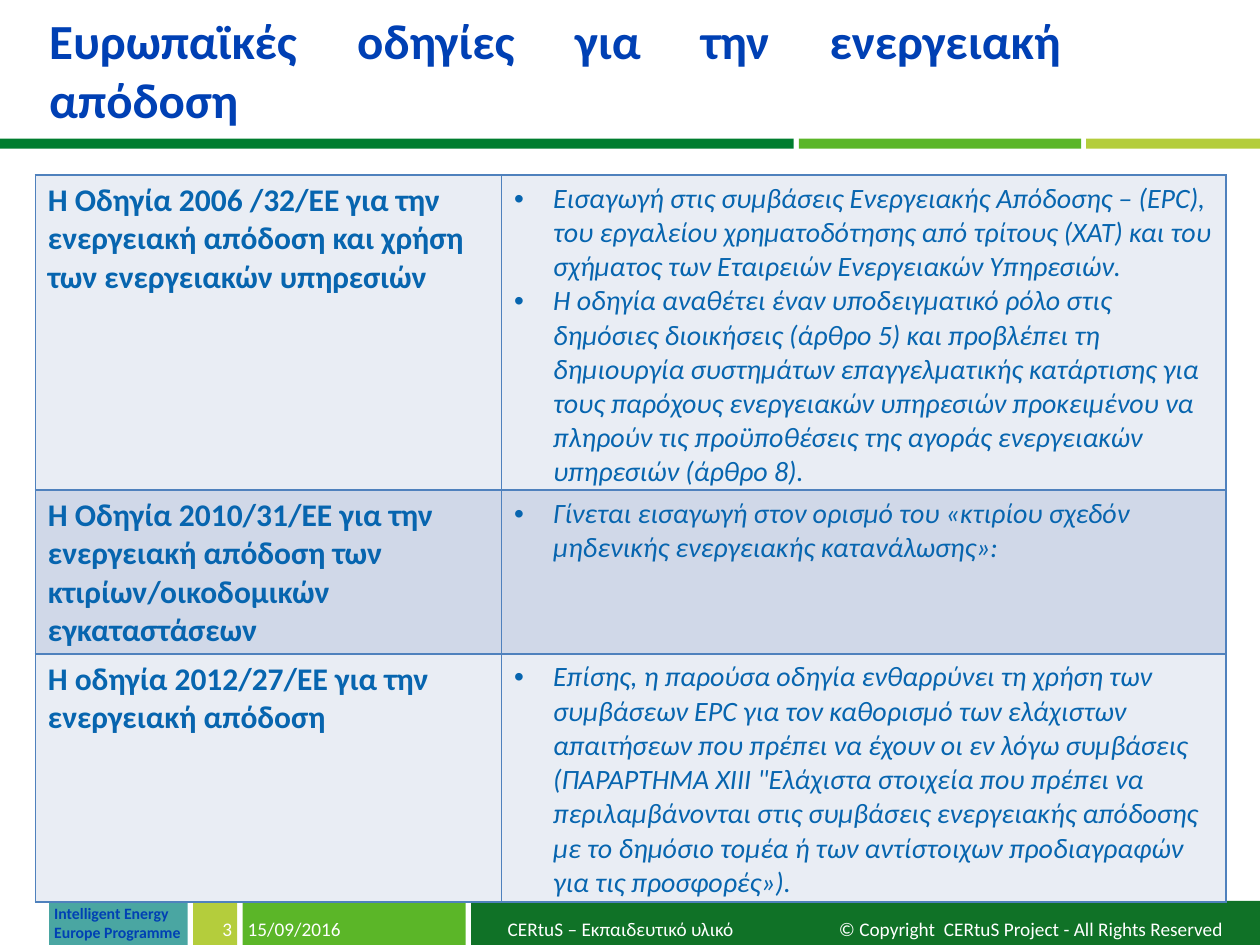
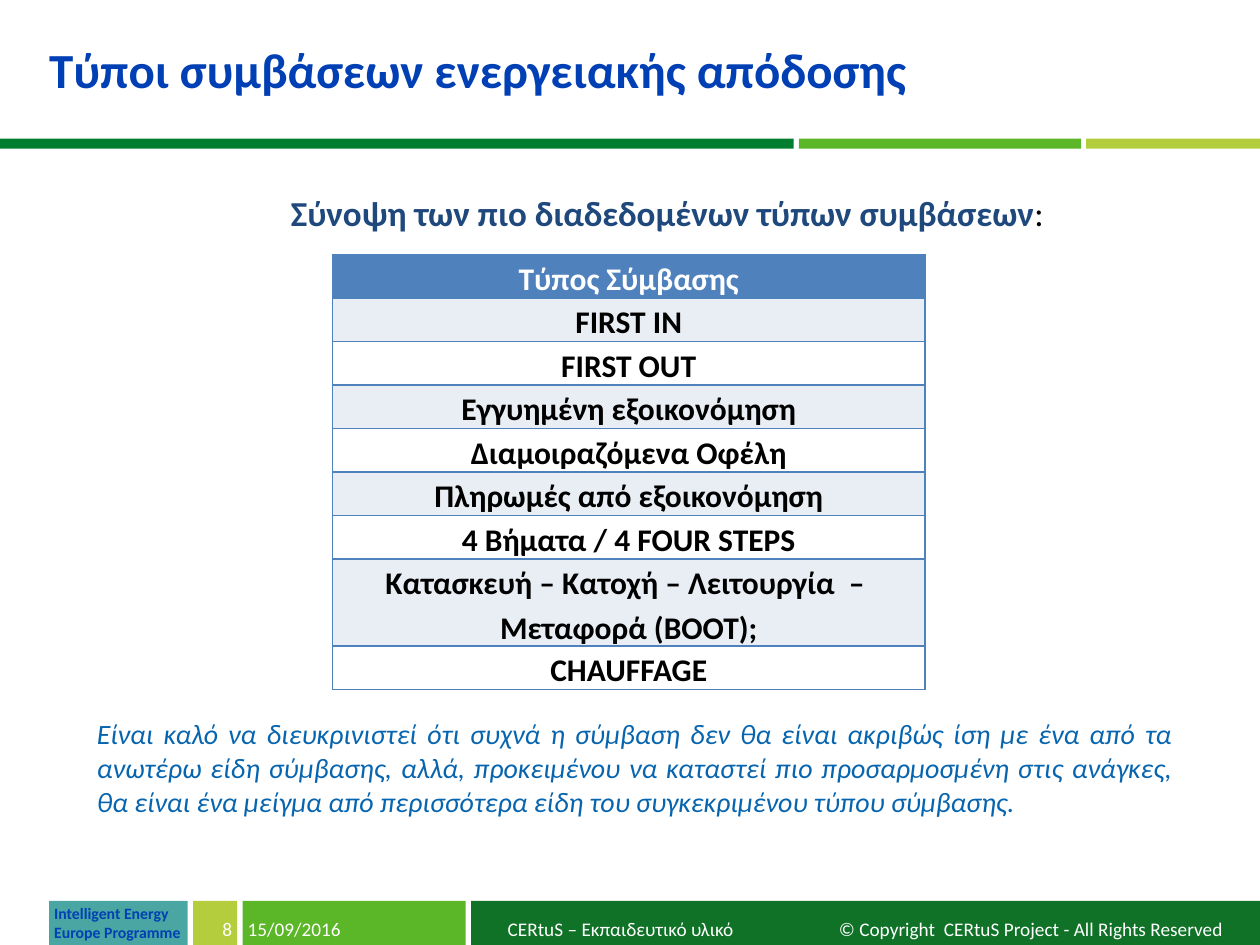
from dataclasses import dataclass

from lxml import etree
from pptx import Presentation
from pptx import util as u
from pptx.dml.color import RGBColor
from pptx.enum import shapes, text
from pptx.oxml import ns

COLS, ROWS = 100, 75  # grid units across and down the slide
UNIT = u.Inches(0.1)

FONT = "Calibri"
WHITE, BLACK = "FFFFFF", "000000"
TITLE_BLUE, TEXT_BLUE, CAPTION_BLUE = "0040B4", "0765AF", "1F497D"
DARK, MID, LIME = "007D2F", "5BB628", "B4CD3C"
TEAL, FOOTER_GREEN = "4AA6A2", "107227"
HEADER, PALE, DEEP = "4F81BD", "E9EDF4", "D0D8E8"

LEFT, CENTER, RIGHT, JUSTIFY = (
    text.PP_ALIGN.LEFT, text.PP_ALIGN.CENTER, text.PP_ALIGN.RIGHT, text.PP_ALIGN.JUSTIFY)
TOP, MIDDLE, BOTTOM = text.MSO_ANCHOR.TOP, text.MSO_ANCHOR.MIDDLE, text.MSO_ANCHOR.BOTTOM

DIRECTIVES = [
    ("Η Οδηγία 2006 /32/ΕΕ για την ενεργειακή απόδοση και χρήση των ενεργειακών υπηρεσιών",
     ["Εισαγωγή στις συμβάσεις Ενεργειακής Απόδοσης – (EPC), του εργαλείου χρηματοδότησης "
      "από τρίτους (ΧΑΤ) και του σχήματος των Εταιρειών Ενεργειακών Υπηρεσιών.",
      "Η οδηγία αναθέτει έναν υποδειγματικό ρόλο στις δημόσιες διοικήσεις (άρθρο 5) και "
      "προβλέπει τη δημιουργία συστημάτων επαγγελματικής κατάρτισης για τους παρόχους "
      "ενεργειακών υπηρεσιών προκειμένου να πληρούν τις προϋποθέσεις της αγοράς "
      "ενεργειακών υπηρεσιών (άρθρο 8)."]),
    ("Η Οδηγία 2010/31/ΕΕ για την ενεργειακή απόδοση των κτιρίων/οικοδομικών εγκαταστάσεων",
     ["Γίνεται εισαγωγή στον ορισμό του «κτιρίου σχεδόν μηδενικής ενεργειακής "
      "κατανάλωσης»:"]),
    ("Η οδηγία 2012/27/ΕΕ για την ενεργειακή απόδοση",
     ["Επίσης, η παρούσα οδηγία ενθαρρύνει τη χρήση των συμβάσεων EPC για τον καθορισμό "
      "των ελάχιστων απαιτήσεων που πρέπει να έχουν οι εν λόγω συμβάσεις (ΠΑΡΑΡΤΗΜΑ XIII "
      "\"Ελάχιστα στοιχεία που πρέπει να περιλαμβάνονται στις συμβάσεις ενεργειακής "
      "απόδοσης με το δημόσιο τομέα ή των αντίστοιχων προδιαγραφών για τις προσφορές»)."]),
]

CONTRACT_TYPES = [
    "Τύπος Σύμβασης", "FIRST IN", "FIRST OUT", "Εγγυημένη εξοικονόμηση",
    "Διαμοιραζόμενα Οφέλη", "Πληρωμές από εξοικονόμηση", "4 Βήματα / 4 FOUR STEPS",
    "Κατασκευή – Κατοχή – Λειτουργία  –  Μεταφορά (BOOT);", "CHAUFFAGE",
]

CONTRACT_NOTE = (
    "Είναι καλό να διευκρινιστεί ότι συχνά η σύμβαση δεν θα είναι ακριβώς ίση με ένα από τα "
    "ανωτέρω είδη σύμβασης, αλλά, προκειμένου να καταστεί πιο προσαρμοσμένη στις ανάγκες, "
    "θα είναι ένα μείγμα από περισσότερα είδη του συγκεκριμένου τύπου σύμβασης.")


@dataclass
class Box:
    """A rectangle in grid units."""
    x: float
    y: float
    w: float
    h: float

    def inner(self, x, y, w, h):
        return Box(self.x + x, self.y + y, w, h)

    def columns(self, widths, gap):
        """Side-by-side boxes of the given widths, from the left edge."""
        boxes, x = [], 0
        for w in widths:
            boxes.append(self.inner(x, 0, w, self.h))
            x += w + gap
        return boxes

    def emu(self):
        return [grid(v) for v in (self.x, self.y, self.w, self.h)]


SLIDE = Box(0, 0, COLS, ROWS)


def grid(value):
    return int(value * UNIT)


def rgb(value):
    return RGBColor.from_string(value)


def sub(parent, tag, **attrs):
    return etree.SubElement(parent, ns.qn(tag), {k: str(v) for k, v in attrs.items()})


def write(tf, paragraphs, size=18, color=BLACK, bold=False, italic=False,
          align=LEFT, spacing=None, bullet=False, indent=0, tab=None):
    """Fill a text frame; a paragraph is a string or a list of (text, color, bold)."""
    for i, content in enumerate(paragraphs):
        p = tf.paragraphs[0] if i == 0 else tf.add_paragraph()
        p.alignment = align
        if spacing:
            p.line_spacing = spacing
        pPr = p._p.get_or_add_pPr()
        if bullet:
            pPr.set("marL", str(grid(3.1)))
            pPr.set("indent", str(-grid(3.1)))
            sub(pPr, "a:buFont", typeface="Arial")
            sub(pPr, "a:buChar", char="•")
        elif indent:
            pPr.set("marL", str(grid(indent)))
        if tab:
            sub(sub(pPr, "a:tabLst"), "a:tab", pos=grid(tab), algn="r")
        runs = [(content, color, bold)] if isinstance(content, str) else content
        for words, run_color, run_bold in runs:
            r = p.add_run()
            r.text = words
            r.font.name, r.font.size = FONT, u.Pt(size)
            r.font.bold, r.font.italic = run_bold, italic
            r.font.color.rgb = rgb(run_color)


def frame(tf, anchor=TOP, insets=(1, 0.5, 1, 0.5), wrap=True):
    tf.word_wrap = wrap
    tf.vertical_anchor = anchor
    tf.margin_left, tf.margin_top, tf.margin_right, tf.margin_bottom = map(grid, insets)
    return tf


def add_bar(s, box, fill):
    sp = s.shapes.add_shape(shapes.MSO_SHAPE.RECTANGLE, *box.emu())
    sp.shadow.inherit = False
    sp.fill.solid()
    sp.fill.fore_color.rgb = rgb(fill)
    sp.line.fill.background()
    return sp


def add_text(s, box, paragraphs, anchor=TOP, insets=(1, 0.5, 1, 0.5), wrap=True, **fmt):
    tb = s.shapes.add_textbox(*box.emu())
    write(frame(tb.text_frame, anchor, insets, wrap), paragraphs, **fmt)


def add_grid_table(s, box, widths, heights):
    table = s.shapes.add_table(len(heights), len(widths), *box.emu()).table
    table.first_row = table.horz_banding = False
    for col, w in zip(table.columns, widths):
        col.width = grid(w)
    for row, h in zip(table.rows, heights):
        row.height = grid(h)
    return table


def fill_cell(cell, paragraphs, fill, anchor=TOP, insets=(1, 0.5, 1, 0.5), **fmt):
    cell.vertical_anchor = anchor
    cell.margin_left, cell.margin_top, cell.margin_right, cell.margin_bottom = map(grid, insets)
    tcPr = cell._tc.get_or_add_tcPr()
    for side in ("a:lnL", "a:lnR", "a:lnT", "a:lnB"):
        ln = sub(tcPr, side, w=u.Pt(1))
        sub(sub(ln, "a:solidFill"), "a:srgbClr", val=HEADER)
    cell.fill.solid()
    cell.fill.fore_color.rgb = rgb(fill)
    write(cell.text_frame, paragraphs, **fmt)


def title_band(s, box, title):
    add_text(s, box.inner(0, 0, 86.2, 11), [title], anchor=MIDDLE, insets=(3.9, 0.4, 2, 0.4),
             size=28, color=TITLE_BLUE, bold=True, align=JUSTIFY)
    stripes = box.inner(0, 11, box.w, 0.8).columns([63, 22.4, 13.8], 0.4)
    for stripe, fill in zip(stripes, (DARK, MID, LIME)):
        add_bar(s, stripe, fill)


def footer(s, box, number):
    cells = [
        (TEAL, ["Intelligent Energy", "Europe Programme"],
         dict(size=9, color=TITLE_BLUE, bold=True)),
        (LIME, [str(number)], dict(align=RIGHT)),
        (MID, ["15/09/2016"], {}),
        (FOOTER_GREEN,
         ["CERtuS – Εκπαιδευτικό υλικό\t© Copyright  CERtuS Project - All Rights Reserved"],
         dict(indent=2.5, tab=59.2)),
    ]
    for cell_box, (fill, words, fmt) in zip(box.columns([11, 3.5, 17.7, 62.6], 0.43), cells):
        programme = fill == TEAL
        tf = frame(add_bar(s, cell_box, fill).text_frame, MIDDLE if programme else BOTTOM,
                   (0.4,) * 4, wrap=not programme)
        write(tf, words, **{"size": 11, "color": WHITE, **fmt})


def directives_table(s, box):
    table = add_grid_table(s, box, [37, 57.5], [24.9, 13, 19.7])
    for i, (name, points) in enumerate(DIRECTIVES):
        fill = DEEP if i % 2 else PALE
        fill_cell(table.cell(i, 0), [name], fill, color=TEXT_BLUE, bold=True)
        fill_cell(table.cell(i, 1), points, fill, size=16, color=TEXT_BLUE, italic=True,
                  bullet=True)


def contract_types(s, box):
    """Caption, one-column table and closing note."""
    heights = [6.9 if "BOOT" in name else 3.45 for name in CONTRACT_TYPES]
    table = add_grid_table(s, box.inner(19.7, 5.5, 47, sum(heights)), [47], heights)
    for i, name in enumerate(CONTRACT_TYPES):
        fill = HEADER if i == 0 else PALE if i % 2 else WHITE
        fill_cell(table.cell(i, 0), [name], fill, MIDDLE, (0.7, 0, 0.7, 0), bold=True,
                  color=BLACK if i else WHITE, align=CENTER, spacing=1.15)
    add_text(s, box.inner(15.4, 0, 62.2, 4.4),
             [[("Σύνοψη των πιο διαδεδομένων τύπων συμβάσεων", CAPTION_BLUE, True),
               (":", BLACK, False)]], wrap=False, size=20)
    add_text(s, box.inner(0, 41.7, box.w, 9.1), [CONTRACT_NOTE], size=16, color=TEXT_BLUE,
             italic=True, align=JUSTIFY)


def add_slide(prs, title, number, body, body_box):
    s = prs.slides.add_slide(prs.slide_layouts[6])
    title_band(s, SLIDE.inner(0, 0, COLS, 11.8), title)
    footer(s, SLIDE.inner(3.9, 71.5, 96.1, 3.5), number)
    body(s, body_box)


def main():
    prs = Presentation()
    prs.slide_width, prs.slide_height = grid(COLS), grid(ROWS)
    add_slide(prs, "Ευρωπαϊκές οδηγίες για την ενεργειακή απόδοση", 3,
              directives_table, SLIDE.inner(2.8, 13.9, 94.5, 57.6))
    add_slide(prs, "Τύποι συμβάσεων ενεργειακής απόδοσης", 8,
              contract_types, SLIDE.inner(6.7, 14.7, 87.4, 50.8))
    prs.save("out.pptx")


if __name__ == "__main__":
    main()
